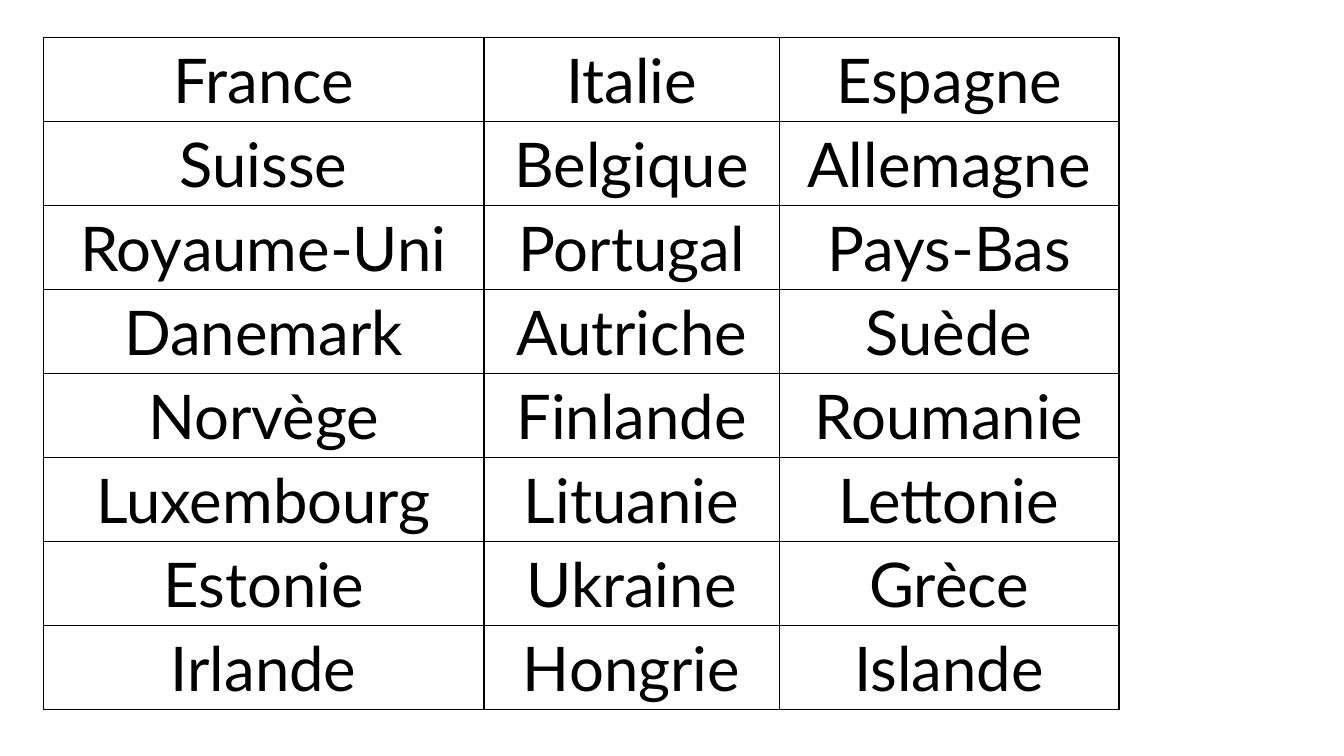
import pptx
import pptx.util
import pptx.dml.color
import pptx.enum.text
import pptx.oxml
import pptx.oxml.ns
from pptx.util import Inches


def color(code):
    return pptx.dml.color.RGBColor.from_string(code)


def border(cell, code, width):
    props = cell._tc.get_or_add_tcPr()
    for side in ("lnL", "lnR", "lnT", "lnB"):
        props.append(pptx.oxml.parse_xml(
            f'<a:{side} {pptx.oxml.ns.nsdecls("a")} w="{pptx.util.Pt(width)}">'
            f'<a:solidFill><a:srgbClr val="{code}"/></a:solidFill></a:{side}>'))


lands = [
    ["France", "Italie", "Espagne"],
    ["Suisse", "Belgique", "Allemagne"],
    ["Royaume-Uni", "Portugal", "Pays-Bas"],
    ["Danemark", "Autriche", "Suède"],
    ["Norvège", "Finlande", "Roumanie"],
    ["Luxembourg", "Lituanie", "Lettonie"],
    ["Estonie", "Ukraine", "Grèce"],
    ["Irlande", "Hongrie", "Islande"],
]
widths = [4.37, 2.93, 3.37]
style = {"name": "Lato", "size": pptx.util.Pt(44), "bold": False}
flags = {"first_row": False, "horz_banding": False}

deck = pptx.Presentation()
deck.slide_width = Inches(13.33)
deck.slide_height = Inches(7.5)
slide = deck.slides.add_slide(deck.slide_layouts[6])

table = slide.shapes.add_table(
    len(lands), len(widths), Inches(0.43), Inches(0.37),
    Inches(sum(widths)), Inches(6.67)).table
for key, value in flags.items():
    setattr(table, key, value)
for column, width in zip(table.columns, widths):
    column.width = Inches(width)

for row, names in zip(table.rows, lands):
    for cell, name in zip(row.cells, names):
        border(cell, "000000", 1)
        cell.fill.solid()
        cell.fill.fore_color.rgb = color("FFFFFF")
        para = cell.text_frame.paragraphs[0]
        para.alignment = pptx.enum.text.PP_ALIGN.CENTER
        run = para.add_run()
        run.text = name
        for key, value in style.items():
            setattr(run.font, key, value)
        run.font.color.rgb = color("000000")

deck.save("out.pptx")
